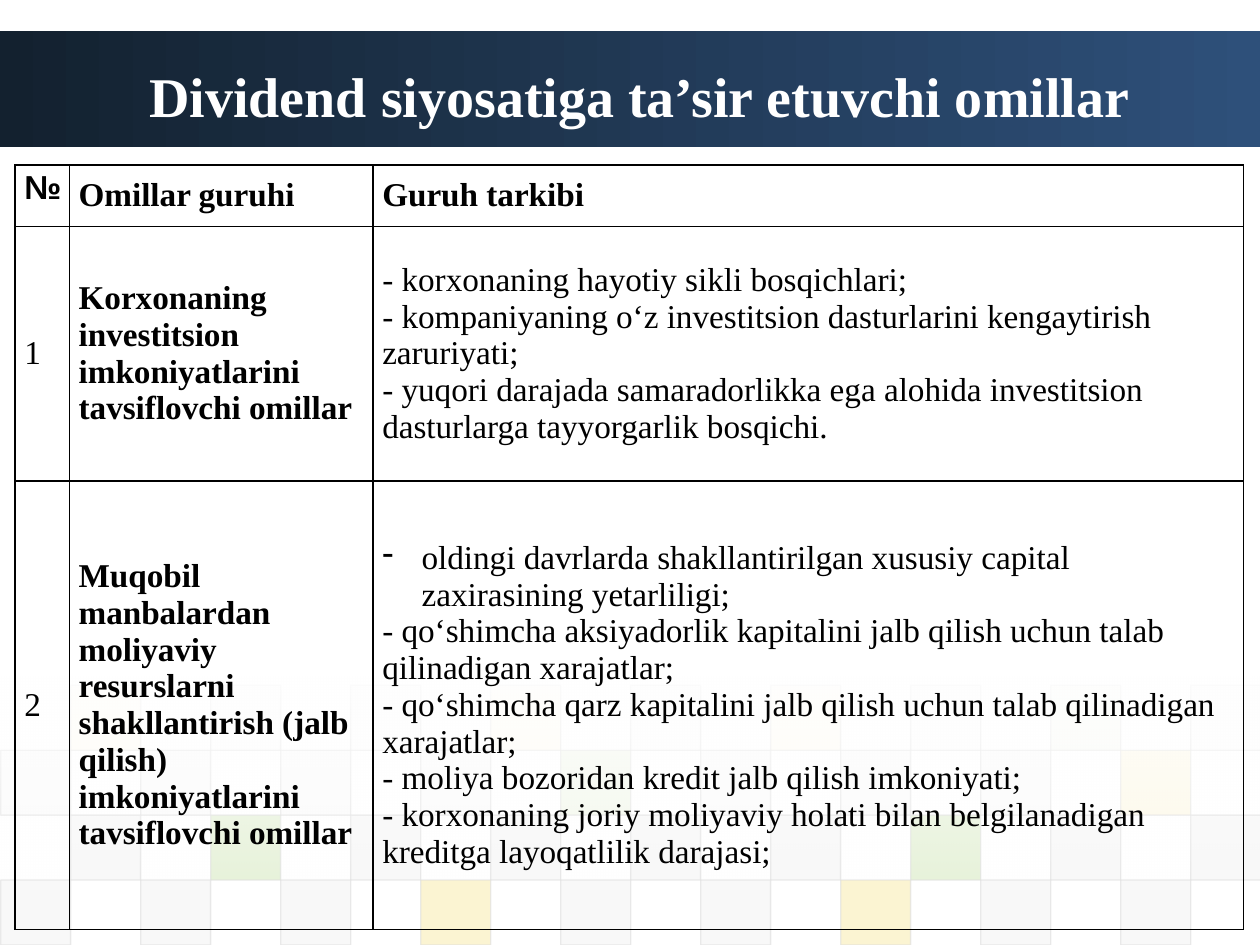
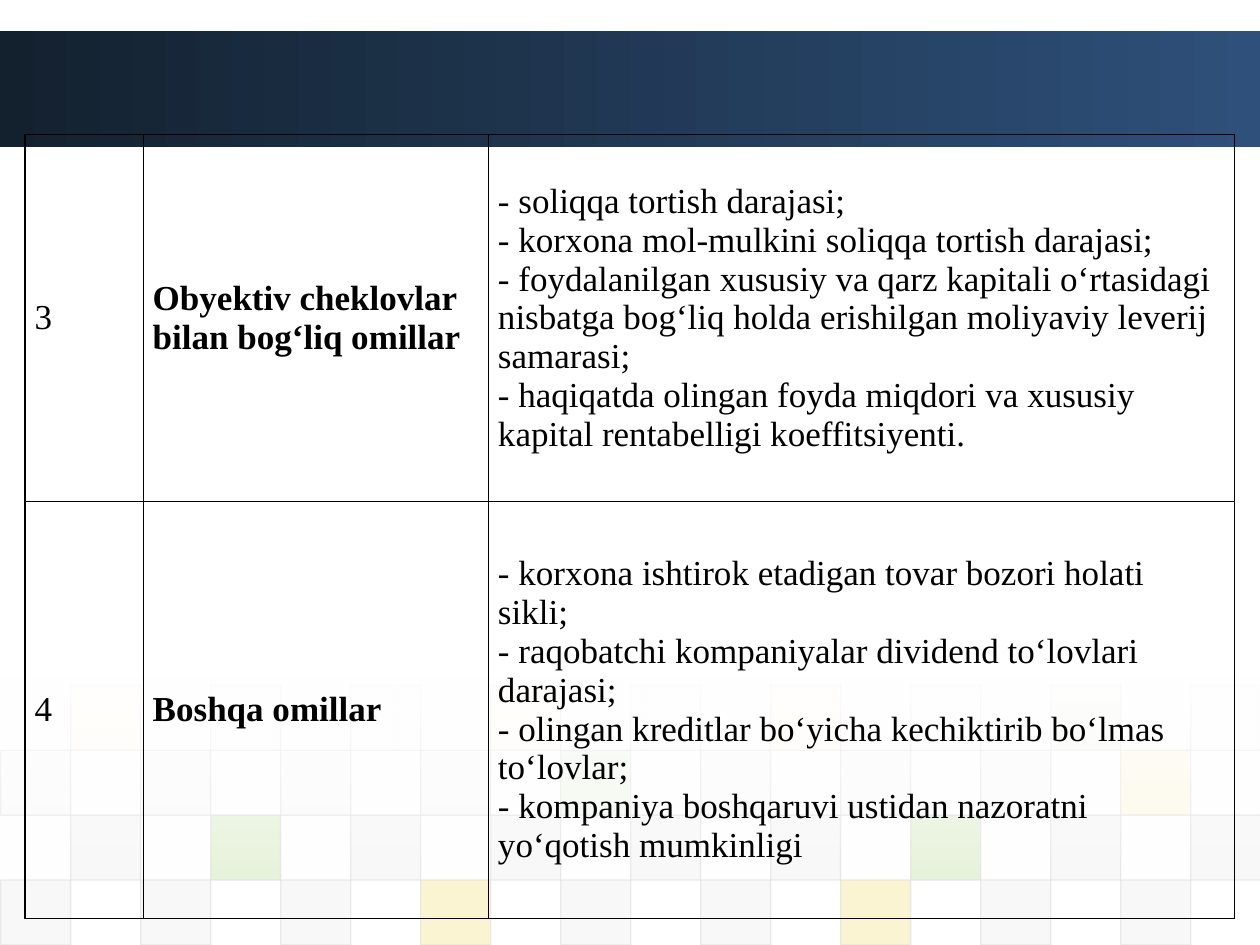
import pptx
import pptx.dml.color
import pptx.enum.shapes
import pptx.enum.text
import pptx.oxml
import pptx.oxml.ns
import pptx.util

Pt = pptx.util.Pt
qn = pptx.oxml.ns.qn
ANCHOR = pptx.enum.text.MSO_ANCHOR

COLORS = {
    "white": "FFFFFF", "black": "000000",
    "band_dark": "13212F", "band_light": "2E507A",
    "grey": "DDDDDD", "pale": "EAEAEA", "green": "8AC246", "gold": "EFC821",
}
SERIF, SANS = "Times New Roman", "Arial"
SLIDE_WIDTH, SLIDE_HEIGHT = 720, 540

# Mosaic rows from top to bottom: first column, opacity, tile colours
TILE_KEYS = {"s": "grey", "p": "pale", "g": "green", "y": "gold"}
MOSAIC_ROWS = [
    (1, 5, "yppysypgp"),
    (0, 10, "ssssgsssy"),
    (1, 20, "sgssssgss"),
    (0, 20, "sssyssyss"),
]

TITLE = "Dividend siyosatiga ta’sir etuvchi omillar "

# Table rows: number, group of factors, paragraphs of the group's content
HEADER = ("№", "Omillar guruhi", ["Guruh tarkibi"])
INVESTMENT = (
    "1",
    "Korxonaning\ninvestitsion\nimkoniyatlarini\ntavsiflovchi omillar",
    ["- korxonaning hayotiy sikli bosqichlari;\n"
     "- kompaniyaning oʻz investitsion dasturlarini kengaytirish zaruriyati;\n"
     "- yuqori darajada samaradorlikka ega alohida investitsion "
     "dasturlarga tayyorgarlik bosqichi."],
)
FINANCING = (
    "2",
    "Muqobil manbalardan\nmoliyaviy resurslarni shakllantirish (jalb\n"
    "qilish) imkoniyatlarini\ntavsiflovchi omillar",
    ["oldingi davrlarda shakllantirilgan xususiy capital zaxirasining yetarliligi;",
     "- qoʻshimcha aksiyadorlik kapitalini jalb qilish uchun talab qilinadigan xarajatlar;\n"
     "- qoʻshimcha qarz kapitalini jalb qilish uchun talab qilinadigan xarajatlar;\n"
     "- moliya bozoridan kredit jalb qilish imkoniyati;\n"
     "- korxonaning joriy moliyaviy holati bilan belgilanadigan "
     "kreditga layoqatlilik darajasi;"],
)
CONSTRAINTS = (
    "3",
    "Obyektiv cheklovlar\nbilan bogʻliq omillar",
    ["- soliqqa tortish darajasi;\n"
     "- korxona mol-mulkini soliqqa tortish darajasi;\n"
     "- foydalanilgan xususiy va qarz kapitali oʻrtasidagi nisbatga "
     "bogʻliq holda erishilgan moliyaviy leverij samarasi;\n"
     "- haqiqatda olingan foyda miqdori va xususiy kapital "
     "rentabelligi koeffitsiyenti."],
)
OTHER = (
    "4",
    "Boshqa omillar",
    ["- korxona ishtirok etadigan tovar bozori holati\nsikli;\n"
     "- raqobatchi kompaniyalar dividend toʻlovlari\ndarajasi;\n"
     "- olingan kreditlar boʻyicha kechiktirib boʻlmas\ntoʻlovlar;\n"
     "- kompaniya boshqaruvi ustidan nazoratni\nyoʻqotish mumkinligi"],
)


def color(name):
    return pptx.dml.color.RGBColor.from_string(COLORS[name])


def add_rectangle(slide, left, top, width, height):
    shape = slide.shapes.add_shape(
        pptx.enum.shapes.MSO_SHAPE.RECTANGLE, Pt(left), Pt(top), Pt(width), Pt(height))
    shape.shadow.inherit = False
    shape.line.fill.background()
    return shape


def set_opacities(shape, *percentages):
    """Give the shape's colours, in document order, their opacities."""
    for element, percentage in zip(shape._element.spPr.iter(qn("a:srgbClr")), percentages):
        alpha = element.makeelement(qn("a:alpha"), {"val": str(percentage * 1000)})
        element.append(alpha)


def fill_gradient(shape, start, end, angle):
    shape.fill.gradient()
    shape.fill.gradient_angle = angle
    for stop, name in zip(shape.fill.gradient_stops, (start, end)):
        stop.color.rgb = color(name)


def add_mosaic(slide, left, top, column_step, row_step):
    """Checkerboard of pale tiles, veiled by a white fade."""
    for row, (first_column, opacity, keys) in enumerate(MOSAIC_ROWS):
        for index, key in enumerate(keys):
            column = first_column + 2 * index
            tile = add_rectangle(slide, left + column * column_step,
                                 top + row * row_step, column_step, row_step)
            tile.fill.solid()
            tile.fill.fore_color.rgb = color(TILE_KEYS[key])
            tile.line.color.rgb = color("grey")
            tile.line.width = Pt(0.75)
            set_opacities(tile, opacity, 60)
    fade = add_rectangle(slide, 0, top - 5, SLIDE_WIDTH, 116.6)
    fill_gradient(fade, "white", "white", 270)
    set_opacities(fade, 90, 0)


def add_background(slide):
    band = add_rectangle(slide, 0, 18, SLIDE_WIDTH, 66)
    fill_gradient(band, "band_dark", "band_light", 0)
    add_mosaic(slide, 0.4, 391.6, 40, 37.1)


def add_text(paragraph, text, size, bold, font_name=SERIF, color_name="black"):
    for index, line in enumerate(text.split("\n")):
        if index:
            paragraph.add_line_break()
        run = paragraph.add_run()
        run.text = line
        run.font.name = font_name
        run.font.size = Pt(size)
        run.font.bold = bold
        run.font.color.rgb = color(color_name)


def add_title(slide, text, left, top, width, height):
    title = slide.shapes.title
    slide.shapes._spTree.append(title._element)  # bring in front of the band
    title.left, title.top, title.width, title.height = map(Pt, (left, top, width, height))
    frame = title.text_frame
    frame.word_wrap = True
    frame.auto_size = pptx.enum.text.MSO_AUTO_SIZE.NONE
    frame.vertical_anchor = ANCHOR.TOP
    paragraph = frame.paragraphs[0]
    paragraph.alignment = pptx.enum.text.PP_ALIGN.CENTER
    add_text(paragraph, text, 32, True, color_name="white")


def add_dash_bullet(paragraph):
    properties = paragraph._p.get_or_add_pPr()
    properties.set("marL", str(Pt(22.5)))
    properties.set("indent", str(-Pt(22.5)))
    properties.append(properties.makeelement(qn("a:buChar"), {"char": "-"}))


def format_cell(cell):
    properties = cell._tc.get_or_add_tcPr()
    for side in "LRTB":
        properties.append(pptx.oxml.parse_xml(
            f'<a:ln{side} xmlns:a="http://schemas.openxmlformats.org/drawingml/2006/main" '
            f'w="{Pt(1)}"><a:solidFill><a:srgbClr val="{COLORS["black"]}"/></a:solidFill>'
            f'</a:ln{side}>'))
    cell.fill.background()
    cell.margin_left = cell.margin_right = Pt(5.4)
    cell.margin_top = cell.margin_bottom = Pt(2.7)
    cell.vertical_anchor = ANCHOR.MIDDLE


def add_factor_table(slide, left, top, column_widths, row_heights, rows, size):
    table = slide.shapes.add_table(
        len(rows), len(column_widths), Pt(left), Pt(top),
        Pt(sum(column_widths)), Pt(sum(row_heights))).table
    table.first_row = table.horz_banding = False
    for column, width in zip(table.columns, column_widths):
        column.width = Pt(width)
    for row, height in zip(table.rows, row_heights):
        row.height = Pt(height)

    for row, (number, group, contents) in zip(table.rows, rows):
        is_header = number == HEADER[0]
        number_cell, group_cell, content_cell = row.cells
        for cell in row.cells:
            format_cell(cell)
        add_text(number_cell.text_frame.paragraphs[0], number, size, is_header,
                 SANS if is_header else SERIF)
        if is_header:
            number_cell.vertical_anchor = ANCHOR.TOP
        add_text(group_cell.text_frame.paragraphs[0], group, size, True)
        frame = content_cell.text_frame
        for index, content in enumerate(contents):
            paragraph = frame.add_paragraph() if index else frame.paragraphs[0]
            if not is_header and not content.startswith("-"):
                add_dash_bullet(paragraph)
            add_text(paragraph, content, size, is_header)


def build_first_slide(presentation):
    slide = presentation.slides.add_slide(presentation.slide_layouts[5])
    add_background(slide)
    add_factor_table(slide, 8.6, 94.3, [31, 173.5, 497.5], [35, 145.5, 256.3],
                     [HEADER, INVESTMENT, FINANCING], 19)
    add_title(slide, TITLE, 70.6, 31.7, 597.6, 46)


def build_second_slide(presentation):
    slide = presentation.slides.add_slide(presentation.slide_layouts[6])
    add_background(slide)
    add_factor_table(slide, 14.4, 77, [67.5, 197.3, 426.2], [209.5, 238.3],
                     [CONSTRAINTS, OTHER], 20)


def main():
    presentation = pptx.Presentation()
    presentation.slide_width, presentation.slide_height = Pt(SLIDE_WIDTH), Pt(SLIDE_HEIGHT)
    build_first_slide(presentation)
    build_second_slide(presentation)
    presentation.save("out.pptx")


if __name__ == "__main__":
    main()
